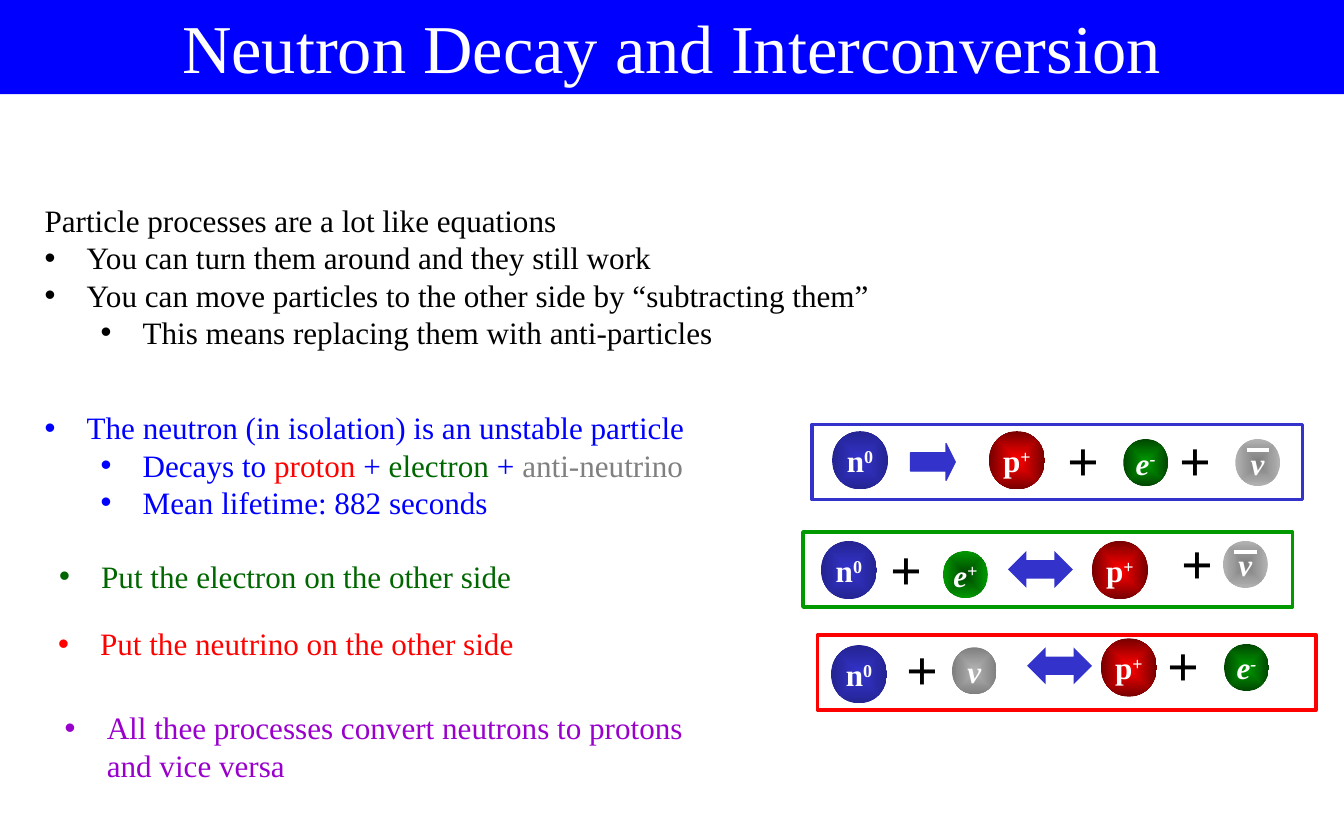
import pptx
import pptx.util
import pptx.dml.color
import pptx.enum.shapes
import pptx.enum.text
import pptx.oxml
import pptx.oxml.ns

SHAPE = pptx.enum.shapes.MSO_SHAPE
ALIGN = pptx.enum.text.PP_ALIGN
ANCHOR = pptx.enum.text.MSO_ANCHOR
GROW = pptx.enum.text.MSO_AUTO_SIZE.SHAPE_TO_FIT_TEXT
Pt = pptx.util.Pt
NS = pptx.oxml.ns.nsdecls("a")
FONT = "Times New Roman"
BLUE, GREEN, RED, NAVY = "0000FF", "006600", "FF0000", "3333CC"

deck = pptx.Presentation()
deck.slide_width = pptx.util.Inches(12)
deck.slide_height = pptx.util.Inches(7.5)
slide = deck.slides.add_slide(deck.slide_layouts[6])
column, row = deck.slide_width / 120, deck.slide_height / 75


def cells(left, top, width, height):
    """Turn grid columns and rows into slide lengths."""
    return (int(left * column), int(top * row), int(width * column), int(height * row))


def rgb(code):
    return pptx.dml.color.RGBColor.from_string(code)


# Title band
band = slide.shapes.add_shape(SHAPE.RECTANGLE, *cells(0, 0, 120, 8.4))
band.shadow.inherit = False
band.fill.solid()
band.fill.fore_color.rgb = rgb(BLUE)
band.line.fill.background()
band.text_frame.vertical_anchor = ANCHOR.TOP
heading = band.text_frame.paragraphs[0]
heading.text = "Neutron Decay and Interconversion"
heading.alignment = ALIGN.CENTER
heading.font.name, heading.font.size = FONT, Pt(44)
heading.font.color.rgb = rgb("FFFFFF")

# Explanations: place, then paragraphs of (indent in columns, coloured pieces)
explanations = [
    ((3, 17.5, 117, 14.5), [
        (0, [("Particle processes are a lot like equations", "000000")]),
        (3.75, [("You can turn them around and they still work", "000000")]),
        (3.75, [("You can move particles to the other side by “subtracting them”", "000000")]),
        (8.75, [("This means replacing them with anti-particles", "000000")])]),
    ((3, 36, 72, 11.1), [
        (3.75, [("The neutron (in isolation) is an unstable particle", BLUE)]),
        (8.75, [("Decays to ", BLUE), ("proton ", RED), ("+ ", BLUE),
                ("electron ", GREEN), ("+ ", BLUE), ("anti-neutrino", "808080")]),
        (8.75, [("Mean lifetime: 882 seconds", BLUE)])]),
    ((4.3, 49.3, 58, 4.4), [(3.75, [("Put the electron on the other side", GREEN)])]),
    ((4.2, 55.3, 58, 4.4), [(3.75, [("Put the neutrino on the other side", RED)])]),
    ((4.8, 62.8, 58, 7.7), [
        (3.75, [("All thee processes convert neutrons to protons and vice versa", "9900CC")])]),
]
for place, points in explanations:
    frame = slide.shapes.add_textbox(*cells(*place)).text_frame
    frame.word_wrap = True
    frame.auto_size = GROW
    for number, (indent, pieces) in enumerate(points):
        point = frame.add_paragraph() if number else frame.paragraphs[0]
        if indent:
            point.level = 1 if indent > 5 else 0
            layout = point._p.get_or_add_pPr()
            layout.set("marL", str(int(indent * column)))
            layout.set("indent", str(int(-3.75 * column)))
            layout.append(pptx.oxml.parse_xml(f'<a:buFont {NS} typeface="Arial"/>'))
            layout.append(pptx.oxml.parse_xml(f'<a:buChar {NS} char="•"/>'))
        point.font.name, point.font.size = FONT, Pt(20)
        point.font.color.rgb = rgb(pieces[0][1])
        for words, colour in pieces:
            run = point.add_run()
            run.text = words
            if len(pieces) > 1:
                run.font.color.rgb = rgb(colour)

# Particles: letter, charge, width, height, centre colour, edge colour
particles = {
    "neutron": ("n", "0", 5, 5.2, NAVY, "242492"),
    "proton": ("p", "+", 5, 5.2, RED, "760000"),
    "electron": ("e", "-", 4, 4.2, "009900", "004700"),
    "positron": ("e", "+", 4, 4.2, "004700", "009900"),
    "neutrino": ("ν", "", 4, 4.2, "B2B2B2", "7F7F7F"),
    "antineutrino": ("ν", "", 4, 4.2, "7F7F7F", "B2B2B2"),
}
arrows = {"decays": (SHAPE.RIGHT_ARROW, 4), "converts": (SHAPE.LEFT_RIGHT_ARROW, 5.8)}

# Equations: frame place, frame colour, terms at column and row
equations = [
    ((72.5, 37.9, 43.8, 6.7), NAVY, [
        ("neutron", 74.3, 38.5), ("decays", 81.3, 39.6), ("proton", 88.3, 38.5),
        ("plus", 94.3, 37.5), ("electron", 100.3, 39.2), ("plus", 104.3, 37.5),
        ("antineutrino", 110.3, 39.2)]),
    ((71.7, 47.5, 43.7, 6.7), "009900", [
        ("neutron", 73.3, 48.3), ("plus", 78.5, 47.2), ("positron", 84.2, 49.2),
        ("converts", 90, 49.2), ("proton", 97.5, 48.3), ("plus", 104.5, 46.7),
        ("antineutrino", 109.2, 48.3)]),
    ((73, 56.7, 44.5, 6.7), RED, [
        ("neutron", 74.2, 57.6), ("plus", 80, 56.2), ("neutrino", 85, 57.8),
        ("converts", 91.7, 57.8), ("proton", 98.3, 57), ("plus", 103.3, 55.8),
        ("electron", 109.3, 57.5)]),
]
for place, colour, terms in equations:
    border = slide.shapes.add_shape(SHAPE.RECTANGLE, *cells(*place))
    border.shadow.inherit = False
    border.fill.background()
    border.line.color.rgb = rgb(colour)
    border.line.width = Pt(2.25)

    for term, x, y in terms:
        if term == "plus":
            frame = slide.shapes.add_textbox(*cells(x, y, 5, 7)).text_frame
            frame.word_wrap = True
            frame.auto_size = GROW
            sign = frame.paragraphs[0]
            sign.text = "+"
            sign.font.name, sign.font.size, sign.font.bold = FONT, Pt(36), True
            sign.font.color.rgb = rgb("000000")
            continue

        if term in arrows:
            outline, width = arrows[term]
            arrow = slide.shapes.add_shape(outline, *cells(x, y, width, 3.3))
            arrow.shadow.inherit = False
            arrow.fill.solid()
            arrow.fill.fore_color.rgb = rgb(NAVY)
            arrow.line.fill.background()
            if term == "decays":
                arrow.adjustments[1] = 0.25
                arrow.line.color.rgb = rgb(NAVY)
                arrow.line.width = Pt(0.75)
            continue

        # Particle ball, shaded from its centre
        letter, charge, width, height, centre, edge = particles[term]
        barred = term == "antineutrino"
        holder = slide.shapes.add_group_shape().shapes if barred else slide.shapes
        ball = holder.add_shape(SHAPE.OVAL, *cells(x, y, width, height))
        ball.shadow.inherit = False
        ball.line.fill.background()
        ball.fill.gradient()
        for stop, shade in zip(ball.fill.gradient_stops, (centre, edge)):
            stop.color.rgb = rgb(shade)
        linear = ball._element.spPr.find(".//" + pptx.oxml.ns.qn("a:lin"))
        linear.getparent().replace(linear, pptx.oxml.parse_xml(
            f'<a:path {NS} path="shape"><a:fillToRect l="50000" t="50000" '
            'r="50000" b="50000"/></a:path>'))

        ball.text_frame.word_wrap = False
        ball.text_frame.vertical_anchor = ANCHOR.MIDDLE
        symbol = ball.text_frame.paragraphs[0]
        symbol.alignment = ALIGN.CENTER
        symbol.font.name, symbol.font.size = FONT, Pt(20)
        symbol.font.bold, symbol.font.italic = True, letter in "eν"
        symbol.font.color.rgb = rgb("FFFFFF")
        symbol.add_run().text = letter
        if charge:
            superscript = symbol.add_run()
            superscript.text = charge
            superscript._r.get_or_add_rPr().set("baseline", "30000")

        # Bar over the antineutrino
        if barred:
            start_x, bar_y, length, _ = cells(x + 1, y + 1, 2, 0)
            bar = holder.add_connector(pptx.enum.shapes.MSO_CONNECTOR.STRAIGHT,
                                       start_x, bar_y, start_x + length, bar_y)
            bar.line.color.rgb = rgb("FFFFFF")
            bar.line.width = Pt(2.25)
            bar._element.spPr.append(pptx.oxml.parse_xml(f"<a:effectLst {NS}/>"))

deck.save("out.pptx")
